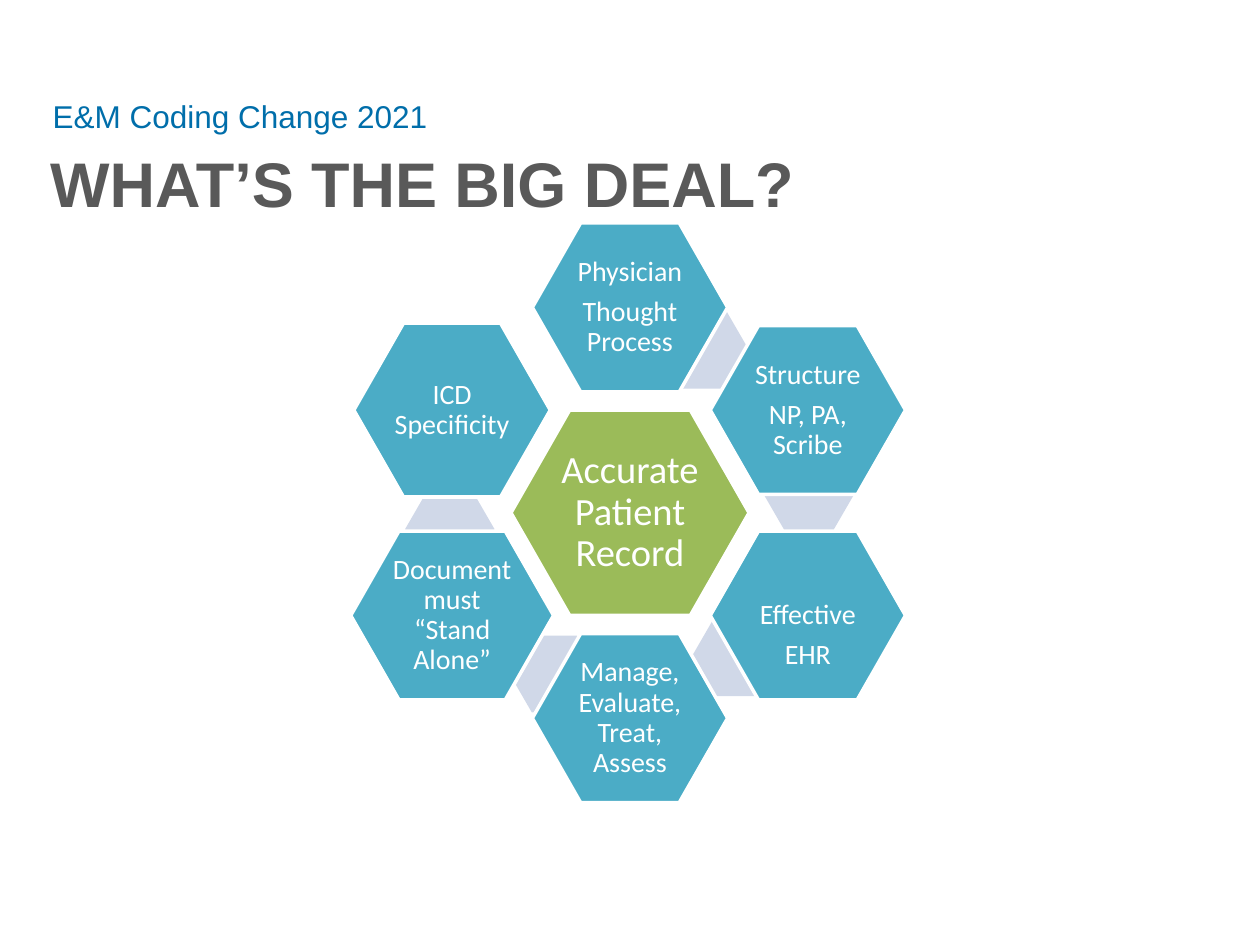
from dataclasses import dataclass
from math import cos, radians, sin

from pptx import Presentation
from pptx.dml.color import RGBColor
from pptx.enum.shapes import MSO_SHAPE
from pptx.enum.text import MSO_ANCHOR, PP_ALIGN
from pptx.util import Inches, Pt

HEXAGON = MSO_SHAPE.HEXAGON
TOP, MIDDLE = MSO_ANCHOR.TOP, MSO_ANCHOR.MIDDLE
LEFT, CENTER = PP_ALIGN.LEFT, PP_ALIGN.CENTER


@dataclass(frozen=True)
class Theme:
    heading_font: str = "Arial"
    diagram_font: str = "Calibri"
    title: str = "595959"
    subtitle: str = "006EAA"
    core: str = "9BBB59"
    factor: str = "4BACC6"
    link: str = "D0D8E8"
    white: str = "FFFFFF"
    title_size: int = 36
    subtitle_size: int = 18
    core_size: int = 22
    factor_size: int = 16


class SlideBuilder:
    def __init__(self, slide, theme):
        self.slide = slide
        self.theme = theme

    def set_lines(self, frame, lines, font, size, color, align, bold=False):
        frame.word_wrap = True
        for index, line in enumerate(lines):
            paragraph = frame.paragraphs[0] if index == 0 else frame.add_paragraph()
            paragraph.text = line
            paragraph.alignment = align
            paragraph.font.name = font
            paragraph.font.size = Pt(size)
            paragraph.font.bold = bold
            paragraph.font.color.rgb = RGBColor.from_string(color)

    def heading(self, text, left, top, width, height, inset_top, size, color, bold=False):
        box = self.slide.shapes.add_textbox(
            Inches(left), Inches(top), Inches(width), Inches(height))
        frame = box.text_frame
        frame.vertical_anchor = TOP
        frame.margin_top = Inches(inset_top)
        self.set_lines(frame, [text], self.theme.heading_font, size, color, LEFT, bold)

    def hexagon(self, center, size, fill, adjust=0.286):
        (x, y), (width, height) = center, size
        hexagon = self.slide.shapes.add_shape(
            HEXAGON, Inches(x - width / 2), Inches(y - height / 2),
            Inches(width), Inches(height))
        hexagon.adjustments[0] = adjust
        hexagon.shadow.inherit = False
        hexagon.fill.solid()
        hexagon.fill.fore_color.rgb = RGBColor.from_string(fill)
        return hexagon

    def link(self, center):
        link = self.hexagon(center, (0.71, 0.61), self.theme.link, 0.289)
        link.line.fill.background()

    def node(self, center, size, fill, lines, text_size, inset=0.02, drop=0):
        node = self.hexagon(center, size, fill)
        node.line.color.rgb = RGBColor.from_string(self.theme.white)
        node.line.width = Pt(2)
        frame = node.text_frame
        frame.vertical_anchor = MIDDLE
        frame.margin_left = frame.margin_right = frame.margin_bottom = Inches(inset)
        frame.margin_top = Inches(inset + drop)
        self.set_lines(frame, lines, self.theme.diagram_font, text_size,
                       self.theme.white, CENTER)
        for paragraph in frame.paragraphs:
            paragraph.line_spacing = 0.9
            paragraph.space_after = Pt(0.35 * text_size)


def main():
    theme = Theme()
    presentation = Presentation()
    presentation.slide_width = Inches(10)
    presentation.slide_height = Inches(7.5)
    blank_layout = presentation.slide_layouts[6]
    builder = SlideBuilder(presentation.slides.add_slide(blank_layout), theme)

    builder.heading("WHAT’S THE BIG DEAL?", 0.3, 1.05, 9.1, 0.6, 0.1,
                    theme.title_size, theme.title, bold=True)
    builder.heading("E&M Coding Change 2021", 0.32, 0.69, 3.33, 0.45, 0.08,
                    theme.subtitle_size, theme.subtitle)

    core_x, core_y = 5, 4.07
    builder.node((core_x, core_y), (1.89, 1.63), theme.core,
                 ["Accurate Patient Record"], theme.core_size, inset=0.03)

    link_centers = [(5.59, 2.78), (6.42, 3.93), (5.84, 5.22), (4.4, 5.35), (3.57, 4.2)]
    for center in link_centers:
        builder.link(center)

    standard = (1.55, 1.34)
    factors = [
        (["Physician", "Thought Process"], standard, 0),
        (["Structure", "NP, PA, Scribe"], standard, 0),
        (["Effective", "EHR"], standard, 0.32),
        (["Manage, Evaluate, Treat, Assess"], standard, 0),
        (["Document must “Stand Alone”"], (1.61, 1.34), 0),
        (["ICD Specificity"], (1.56, 1.38), 0),
    ]
    ring_radius = 1.63
    for index, (lines, size, drop) in enumerate(factors):
        angle = radians(360 / len(factors) * index - 90)
        center = (core_x + ring_radius * cos(angle), core_y + ring_radius * sin(angle))
        builder.node(center, size, theme.factor, lines, theme.factor_size, drop=drop)

    presentation.save("out.pptx")


if __name__ == "__main__":
    main()
